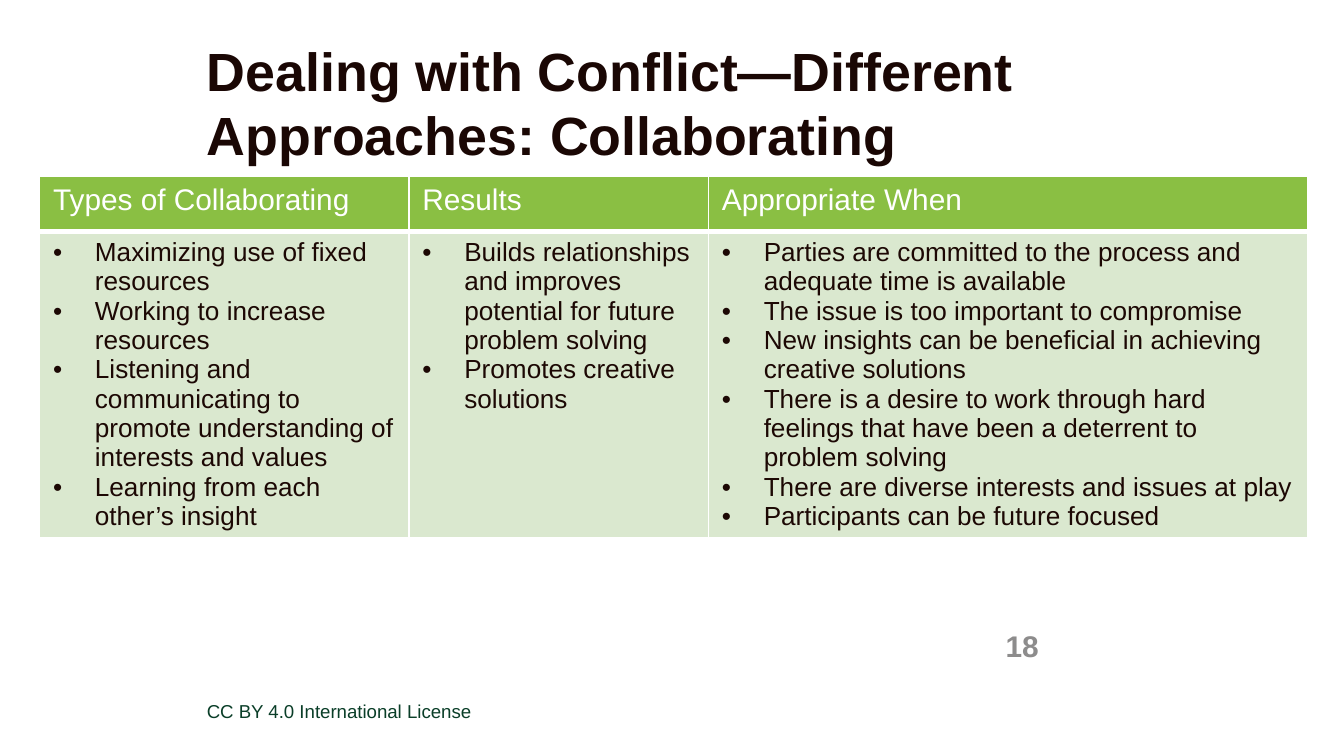
"""Build a slide with a table on collaborating as a way to deal with conflict."""
import lxml.etree
import pptx
import pptx.dml.color
import pptx.enum.text
import pptx.oxml.ns
import pptx.util
from dataclasses import dataclass

Cm, Pt = pptx.util.Cm, pptx.util.Pt
RGB = pptx.dml.color.RGBColor.from_string
ALIGN = pptx.enum.text.PP_ALIGN
ANCHOR = pptx.enum.text.MSO_ANCHOR
qn = pptx.oxml.ns.qn


@dataclass(frozen=True)
class Theme:
    font: str = "Arial"
    title: str = "1A0704"
    body: str = "1C0804"
    license: str = "0A3E28"
    number: str = "8D8C8C"
    white: str = "FFFFFF"
    header_fill: str = "8ABF43"
    body_fill: str = "DAE8CF"
    title_size: float = 28.8
    header_size: float = 16
    body_size: float = 14
    license_size: float = 10
    number_size: float = 16


theme = Theme()


def style(p, size, color, bold=False):
    for r in p.runs:
        r.font.name = theme.font
        r.font.size = Pt(size)
        r.font.bold = bold
        r.font.color.rgb = RGB(color)


def add_text(text, box, size, color, bold=False):
    tf = s.shapes.add_textbox(*map(Cm, box)).text_frame
    tf.margin_left = tf.margin_top = tf.margin_right = tf.margin_bottom = 0
    tf.word_wrap = True
    tf.text = text
    style(tf.paragraphs[0], size, color, bold)
    return tf


prs = pptx.Presentation()
prs.slide_width, prs.slide_height = Cm(25.4), Cm(14.29)
s = prs.slides.add_slide(prs.slide_layouts[6])

tf = add_text("Dealing with Conflict—Different Approaches: Collaborating",
              (3.91, 0.72, 20.22, 2.4), theme.title_size, theme.title, True)
tf.paragraphs[0].line_spacing = Pt(34.3)

add_text("CC BY 4.0 International License",
         (3.91, 13.23, 15.21, 0.4), theme.license_size, theme.license)

tf = add_text("18", (18.06, 11.76, 1.57, 0.76), theme.number_size, theme.number, True)
tf.margin_top = Cm(0.13)
tf.vertical_anchor = ANCHOR.MIDDLE
tf.paragraphs[0].alignment = ALIGN.RIGHT

columns = [
    ("Types of Collaborating", 6.98, [
        "Maximizing use of fixed resources",
        "Working to increase resources",
        "Listening and communicating to promote understanding of interests and values",
        "Learning from each other’s insight",
    ]),
    ("Results", 5.66, [
        "Builds relationships and improves potential for future problem solving",
        "Promotes creative solutions",
    ]),
    ("Appropriate When", 11.32, [
        "Parties are committed to the process and adequate time is available",
        "The issue is too important to compromise",
        "New insights can be beneficial in achieving creative solutions",
        "There is a desire to work through hard feelings that have been a deterrent to problem solving",
        "There are diverse interests and issues at play",
        "Participants can be future focused",
    ]),
]
heights = (1.03, 5.78)
table = s.shapes.add_table(2, len(columns), Cm(0.75), Cm(3.34),
                           Cm(sum(width for _, width, _ in columns)),
                           Cm(sum(heights))).table
for row, height in zip(table.rows, heights):
    row.height = Cm(height)

for col, (heading, width, points) in enumerate(columns):
    table.columns[col].width = Cm(width)
    header, body = table.cell(0, col), table.cell(1, col)

    for cell, fill, bottom in ((header, theme.header_fill, 3), (body, theme.body_fill, 1)):
        tcPr = cell._tc.get_or_add_tcPr()
        for side, weight in (("L", 1), ("R", 1), ("T", 1), ("B", bottom)):
            ln = lxml.etree.SubElement(tcPr, qn(f"a:ln{side}"), w=str(Pt(weight)))
            solid = lxml.etree.SubElement(ln, qn("a:solidFill"))
            lxml.etree.SubElement(solid, qn("a:srgbClr"), val=theme.white)
        cell.fill.solid()
        cell.fill.fore_color.rgb = RGB(fill)

    header.text_frame.text = heading
    style(header.text_frame.paragraphs[0], theme.header_size, theme.white)

    body.text_frame.text = "\n".join(points)
    for p in body.text_frame.paragraphs:
        pPr = p._p.get_or_add_pPr()
        pPr.set("marL", str(Cm(0.79)))
        pPr.set("indent", str(-Cm(0.79)))
        lxml.etree.SubElement(pPr, qn("a:buFont"), typeface=theme.font)
        lxml.etree.SubElement(pPr, qn("a:buChar"), char="•")
        p.line_spacing = Pt(15.7)
        style(p, theme.body_size, theme.body)

prs.save("out.pptx")
